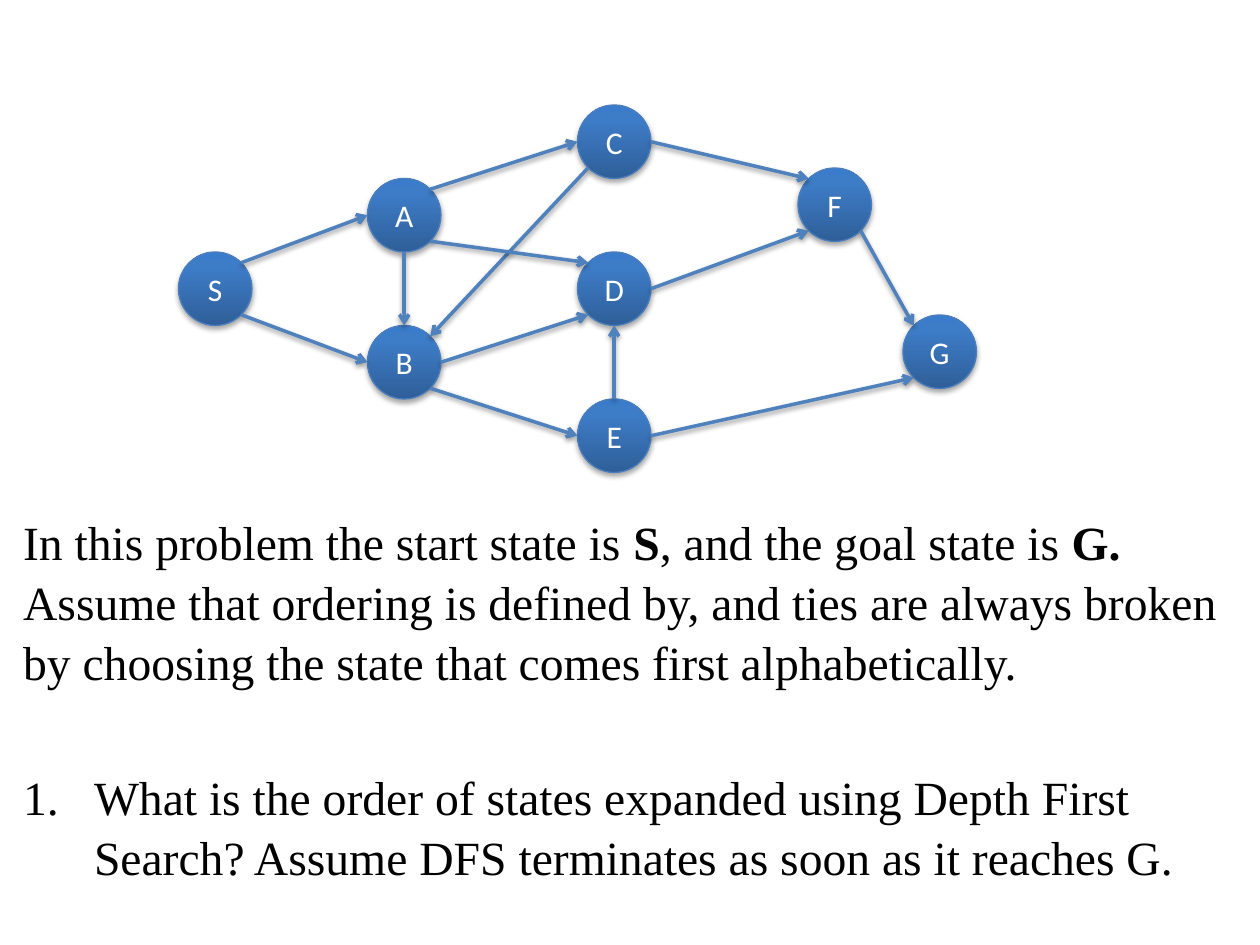
from dataclasses import dataclass
from enum import IntEnum
from math import cos, pi, sin

from lxml.etree import SubElement
from pptx import Presentation
from pptx.dml.color import RGBColor as Color
from pptx.enum.shapes import MSO_CONNECTOR as ConnectorType, MSO_SHAPE as ShapeType
from pptx.enum.text import MSO_ANCHOR as Anchor, MSO_AUTO_SIZE as AutoSize, PP_ALIGN as Align
from pptx.oxml.ns import qn
from pptx.util import Pt


@dataclass(frozen=True)
class Theme:
    node_stops: tuple = ((0, "2F5F99"), (80, "3D7CC7"), (100, "3A7CCB"))
    node_line: str = "4B7EBC"
    node_text: str = "FFFFFF"
    edge: str = "4F81BD"
    body_text: str = "000000"
    shadow: str = "000000"
    node_font: str = "Calibri"
    body_font: str = "Times New Roman"
    node_size: float = 18
    body_size: float = 27.2


class Site(IntEnum):
    """Connection sites of an ellipse, counterclockwise from the top."""
    TOP = 0
    TOP_LEFT = 1
    LEFT = 2
    BOTTOM_LEFT = 3
    BOTTOM = 4
    BOTTOM_RIGHT = 5
    RIGHT = 6
    TOP_RIGHT = 7


@dataclass(frozen=True)
class Node:
    name: str
    left: float
    top: float

    def site_point(self, site: Site) -> tuple:
        angle, radius = site * pi / 4, DIAMETER / 2
        return (Pt(self.left + radius - radius * sin(angle)),
                Pt(self.top + radius - radius * cos(angle)))


@dataclass(frozen=True)
class Edge:
    start: str
    start_site: Site
    end: str
    end_site: Site


THEME = Theme()
DIAMETER = 42
NODES = (
    Node("A", 210, 102), Node("S", 102, 144), Node("B", 210, 186), Node("C", 330, 60),
    Node("D", 330, 144), Node("E", 330, 228), Node("F", 456, 96), Node("G", 516, 180),
)
EDGES = (
    Edge("S", Site.TOP_RIGHT, "A", Site.LEFT),
    Edge("S", Site.BOTTOM_RIGHT, "B", Site.LEFT),
    Edge("A", Site.BOTTOM, "B", Site.TOP),
    Edge("A", Site.TOP_RIGHT, "C", Site.LEFT),
    Edge("C", Site.BOTTOM_LEFT, "B", Site.TOP_RIGHT),
    Edge("A", Site.BOTTOM_RIGHT, "D", Site.TOP_LEFT),
    Edge("B", Site.RIGHT, "D", Site.BOTTOM_LEFT),
    Edge("B", Site.BOTTOM_RIGHT, "E", Site.LEFT),
    Edge("E", Site.TOP, "D", Site.BOTTOM),
    Edge("D", Site.RIGHT, "F", Site.BOTTOM_LEFT),
    Edge("C", Site.RIGHT, "F", Site.TOP_LEFT),
    Edge("F", Site.BOTTOM_RIGHT, "G", Site.TOP_LEFT),
    Edge("E", Site.RIGHT, "G", Site.BOTTOM_LEFT),
)
INTRODUCTION = (
    ("In this problem the start state is ", False),
    ("S", True),
    (", and the goal state is ", False),
    ("G. ", True),
    ("Assume that ordering is defined by, and ties are always broken "
     "by choosing the state that comes first alphabetically.", False),
)
QUESTION = (
    ("What is the order of states expanded using Depth First Search? "
     "Assume DFS terminates as soon as it reaches G.", False),
)


def apply_format(target, values: dict) -> None:
    for name, value in values.items():
        setattr(target, name, value)


def format_font(font, name: str, size: float, color: str, bold: bool = False) -> None:
    apply_format(font, {"name": name, "size": Pt(size), "bold": bold})
    font.color.rgb = Color.from_string(color)


def add_color(parent, color: str, alpha: int = 100) -> None:
    element = SubElement(parent, qn("a:srgbClr"), val=color)
    if alpha < 100:
        SubElement(element, qn("a:alpha"), val=str(alpha * 1000))


def add_shadow(shape, alpha: int, distance: float) -> None:
    """Add a soft downward shadow; call it after the line is set."""
    effects = SubElement(shape._element.spPr, qn("a:effectLst"))
    shadow = SubElement(effects, qn("a:outerShdw"), blurRad=str(Pt(3.1)),
                        dist=str(Pt(distance)), dir="5400000", rotWithShape="0")
    add_color(shadow, THEME.shadow, alpha)


def format_line(line, color: str, width: float) -> None:
    line.color.rgb = Color.from_string(color)
    line.width = Pt(width)


def fill_gradient(shape) -> None:
    shape.fill.gradient()
    shape.fill.gradient_angle = 90
    stops = shape._element.spPr.find(".//" + qn("a:gsLst"))
    for stop in list(stops):
        stops.remove(stop)
    for position, color in THEME.node_stops:
        add_color(SubElement(stops, qn("a:gs"), pos=str(position * 1000)), color)


def draw_node(group, node: Node):
    shape = group.shapes.add_shape(ShapeType.OVAL, Pt(node.left), Pt(node.top),
                                   Pt(DIAMETER), Pt(DIAMETER))
    fill_gradient(shape)
    format_line(shape.line, THEME.node_line, 0.75)
    add_shadow(shape, 35, 1.8)
    shape.text_frame.vertical_anchor = Anchor.MIDDLE
    paragraph = shape.text_frame.paragraphs[0]
    paragraph.alignment = Align.CENTER
    run = paragraph.add_run()
    run.text = node.name
    format_font(run.font, THEME.node_font, THEME.node_size, THEME.node_text)
    return shape


def draw_edge(group, edge: Edge, nodes: dict, shapes: dict) -> None:
    connector = group.shapes.add_connector(
        ConnectorType.STRAIGHT,
        *nodes[edge.start].site_point(edge.start_site),
        *nodes[edge.end].site_point(edge.end_site))
    format_line(connector.line, THEME.edge, 2)
    SubElement(connector._element.spPr.find(qn("a:ln")), qn("a:tailEnd"), type="arrow")
    add_shadow(connector, 38, 1.6)
    # begin_connect knows only four sites, and an ellipse has eight
    joints = connector._element.find(".//" + qn("p:cNvCxnSpPr"))
    for tag, name, site in (("a:stCxn", edge.start, edge.start_site),
                            ("a:endCxn", edge.end, edge.end_site)):
        SubElement(joints, qn(tag), id=str(shapes[name].shape_id), idx=str(int(site)))


def draw_graph(slide) -> None:
    group = slide.shapes.add_group_shape()
    nodes = {node.name: node for node in NODES}
    shapes = {node.name: draw_node(group, node) for node in NODES}
    for edge in EDGES:
        draw_edge(group, edge, nodes, shapes)


def write_paragraph(paragraph, runs: tuple, space_before: float, numbered: bool) -> None:
    apply_format(paragraph, {"space_before": Pt(space_before), "line_spacing": 1.05})
    properties = paragraph._p.get_or_add_pPr()
    indent = Pt(40.5) if numbered else 0
    properties.set("marL", str(indent))
    properties.set("indent", str(-indent))
    if numbered:
        SubElement(properties, qn("a:buFont"), typeface="+mj-lt")
        SubElement(properties, qn("a:buAutoNum"), type="arabicPeriod")
    else:
        SubElement(properties, qn("a:buNone"))
    for text, bold in runs:
        run = paragraph.add_run()
        run.text = text
        format_font(run.font, THEME.body_font, THEME.body_size, THEME.body_text, bold)


def write_body(body) -> None:
    apply_format(body, {"left": Pt(6), "top": Pt(288), "width": Pt(708), "height": Pt(246)})
    frame = body.text_frame
    apply_format(frame, {"word_wrap": True, "auto_size": AutoSize.NONE,
                         "vertical_anchor": Anchor.TOP})
    write_paragraph(frame.paragraphs[0], INTRODUCTION, 5.4, False)
    write_paragraph(frame.add_paragraph(), QUESTION, 43, True)


def main() -> None:
    presentation = Presentation()
    apply_format(presentation, {"slide_width": Pt(720), "slide_height": Pt(540)})
    slide = presentation.slides.add_slide(presentation.slide_layouts[1])
    title = slide.shapes.title._element
    title.getparent().remove(title)
    write_body(slide.placeholders[1])
    draw_graph(slide)
    presentation.save("out.pptx")


if __name__ == "__main__":
    main()
